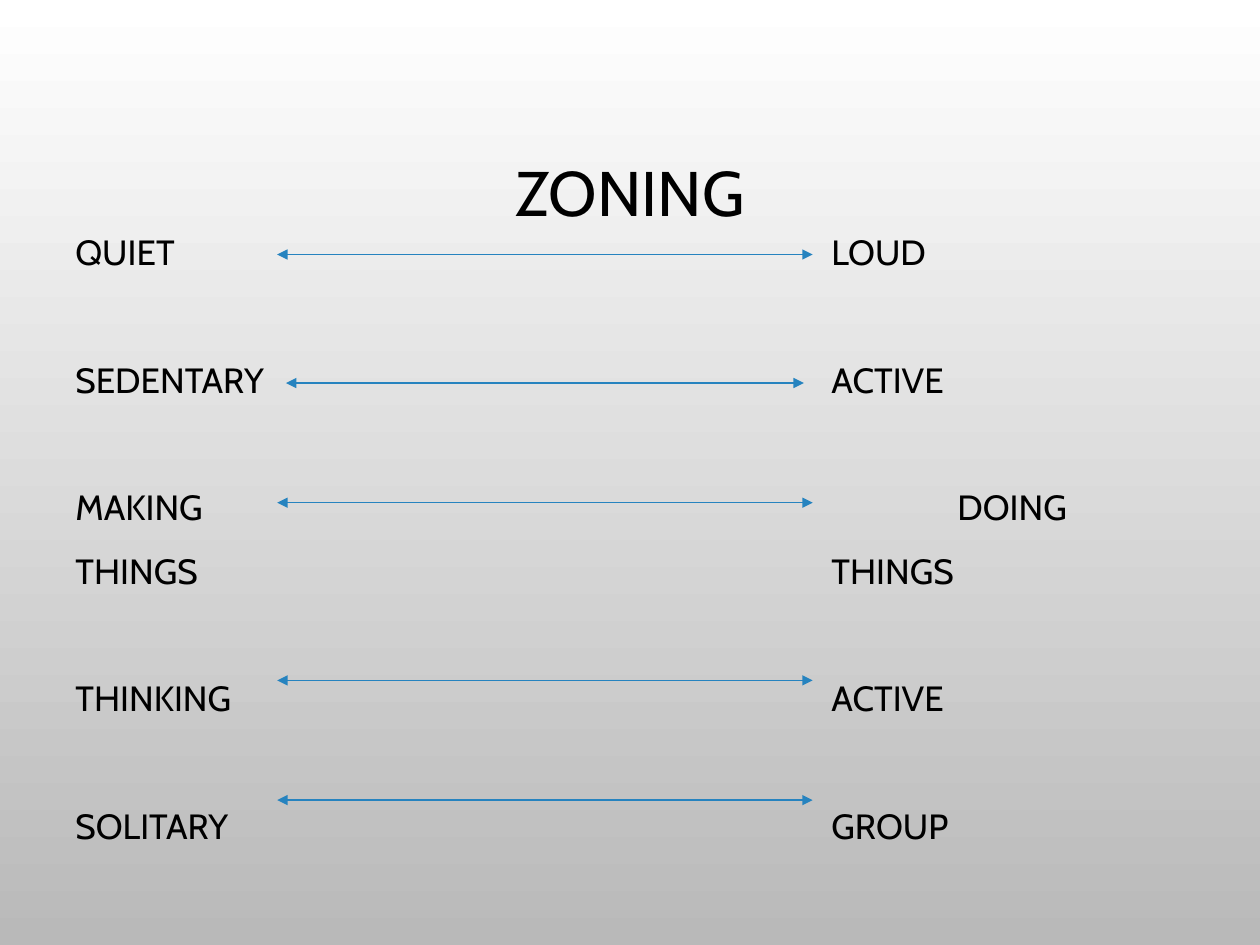
"""Build the zoning slide: pairs of opposite activities joined by arrows."""
import dataclasses

import lxml.etree
import pptx
import pptx.dml.color
import pptx.enum.dml
import pptx.enum.shapes
import pptx.enum.text
import pptx.oxml.ns
import pptx.util

Inches = pptx.util.Inches
Pt = pptx.util.Pt
qn = pptx.oxml.ns.qn


@dataclasses.dataclass(frozen=True)
class Theme:
    """Colours, font and type sizes of the slide."""
    font: str = "Cabin"
    ink: str = "000000"
    arrow: str = "2683BF"
    sky: str = "FFFFFF"
    ground: str = "B9B9B9"
    title_size: float = 36
    body_size: float = 20
    arrow_width: float = 0.75


def rgb(code):
    """Return a colour from its hex code."""
    return pptx.dml.color.RGBColor.from_string(code)


def write(paragraph, text, *, size, font, color, align=None, spacing=1.0, before=0, tab=None):
    """Put text in a paragraph and format it."""
    paragraph.text = text
    paragraph.alignment = align
    paragraph.line_spacing = spacing
    paragraph.space_before = Pt(before)
    if tab is not None:
        stops = lxml.etree.SubElement(paragraph._p.get_or_add_pPr(), qn("a:tabLst"))
        lxml.etree.SubElement(stops, qn("a:tab"), pos=str(Inches(tab)), algn="l")
    paragraph.font.size = Pt(size)
    paragraph.font.name = font
    paragraph.font.color.rgb = rgb(color)


class SlideBuilder:
    """Holds the theme and the current slide."""

    def __init__(self, slide, theme):
        """Keep the slide and its theme."""
        self.slide = slide
        self.theme = theme

    def background(self):
        """Shade the slide from top to bottom."""
        fill = self.slide.background.fill
        fill.gradient()
        fill.gradient_angle = 270
        for stop, color in zip(fill.gradient_stops, (self.theme.sky, self.theme.ground)):
            stop.color.rgb = rgb(color)

    def title(self, text, left, top, width, height):
        """Place and fill the title placeholder."""
        heading = self.slide.shapes.title
        heading.left, heading.top = Inches(left), Inches(top)
        heading.width, heading.height = Inches(width), Inches(height)
        frame = heading.text_frame
        frame.auto_size = pptx.enum.text.MSO_AUTO_SIZE.NONE
        frame.vertical_anchor = pptx.enum.text.MSO_ANCHOR.MIDDLE
        write(frame.paragraphs[0], text, size=self.theme.title_size, font=self.theme.font,
              color=self.theme.ink, align=pptx.enum.text.PP_ALIGN.CENTER, spacing=0.9)

    def pairs(self, rows, left, top, width, height):
        """List the opposites in two tabbed columns."""
        frame = self.slide.shapes.add_textbox(
            Inches(left), Inches(top), Inches(width), Inches(height)).text_frame
        frame.word_wrap = True
        for index, (first, second, tab, before) in enumerate(rows):
            paragraph = frame.add_paragraph() if index else frame.paragraphs[0]
            write(paragraph, f"{first}\t{second}", size=self.theme.body_size,
                  font=self.theme.font, color=self.theme.ink, spacing=1.1,
                  before=before, tab=tab)

    def arrow(self, start, end, y):
        """Draw a horizontal line with a head at each end."""
        arrow = self.slide.shapes.add_connector(
            pptx.enum.shapes.MSO_CONNECTOR.STRAIGHT,
            Inches(start), Inches(y), Inches(end), Inches(y))
        arrow.line.color.rgb = rgb(self.theme.arrow)
        arrow.line.width = Pt(self.theme.arrow_width)
        outline = arrow.line._get_or_add_ln()
        for end_tag in ("a:headEnd", "a:tailEnd"):
            lxml.etree.SubElement(outline, qn(end_tag), type="triangle")
        lxml.etree.SubElement(arrow._element.spPr, qn("a:effectLst"))


def main():
    """Build and save the slide."""
    deck = pptx.Presentation()
    deck.slide_width, deck.slide_height = Inches(10), Inches(7.5)
    zoning = SlideBuilder(deck.slides.add_slide(deck.slide_layouts[5]), Theme())
    zoning.background()
    zoning.title("ZONING", 0.75, 0.68, 8.5, 1.75)

    column, indented = 6, 7
    line_gap, group_gap = 10, 46.4
    zoning.pairs([
        ("QUIET", "LOUD", column, 0),
        ("SEDENTARY", "ACTIVE", column, group_gap),
        ("MAKING", "DOING", indented, group_gap),
        ("THINGS", "THINGS", column, line_gap),
        ("THINKING", "ACTIVE", column, group_gap),
        ("SOLITARY", "GROUP", column, group_gap),
    ], 0.5, 1.75, 8.17, 5.33)

    for y in (2.02, 3.99, 5.4, 6.35):
        zoning.arrow(2.2, 6.45, y)
    zoning.arrow(2.27, 6.38, 3.04)
    deck.save("out.pptx")


if __name__ == "__main__":
    main()
